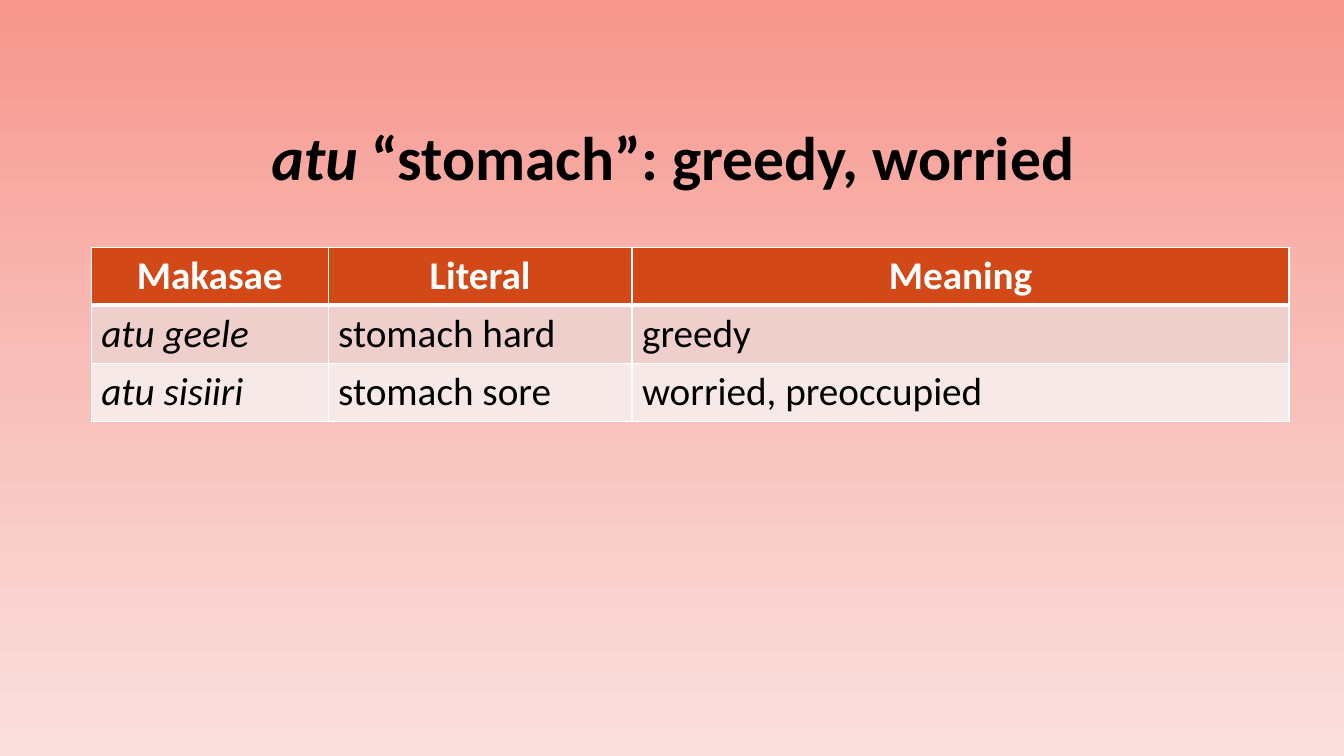
from copy import deepcopy

from lxml.etree import SubElement
from pptx import Presentation
from pptx.dml.color import RGBColor
from pptx.enum.text import MSO_ANCHOR, PP_ALIGN
from pptx.oxml.ns import qn
from pptx.util import Pt

FONT = "Calibri"
BACKGROUND = ["F7968C", "F8BFBA", "FBE0DE"]
COLUMN_WIDTHS = [169.2, 217.1, 469.3]
ROW_HEIGHT = 41
ROW_FILLS = ["D34817", "EFCFCC", "F7E9E8"]
ROWS = [
    ["Makasae", "Literal", "Meaning"],
    ["atu geele", "stomach hard", "greedy"],
    ["atu sisiiri", "stomach sore", "worried, preoccupied"],
]


def colour(value):
    """Turn a hex string into a colour."""
    return RGBColor.from_string(value)


def style(paragraph, size, value, bold=False):
    """Set the font of a whole paragraph."""
    font = paragraph.font
    font.name, font.size, font.bold = FONT, Pt(size), bold
    font.color.rgb = colour(value)


def paint_background(page):
    """Fill the page with an even gradient from top to bottom."""
    fill = page.background.fill
    fill.gradient()
    fill.gradient_angle = 270
    stops = page.element.find(".//" + qn("a:gsLst"))
    stops.insert(1, deepcopy(stops[0]))
    for index, value in enumerate(BACKGROUND):
        stop = stops[index]
        stop.set("pos", str(index * 50000))
        stop.remove(stop[0])
        SubElement(stop, qn("a:srgbClr"), val=value)


def write_title(page):
    """Place the title, with its first word in italics."""
    title = page.shapes.title
    title.left, title.top, title.width, title.height = Pt(115.2), Pt(64), Pt(731.5), Pt(95)
    title.text_frame.vertical_anchor = MSO_ANCHOR.MIDDLE
    paragraph = title.text_frame.paragraphs[0]
    paragraph.alignment = PP_ALIGN.CENTER
    for text, italic in [("atu", True), (" “stomach”: greedy, worried", False)]:
        span = paragraph.add_run()
        span.text, span.font.italic = text, italic
    style(paragraph, 44, "000000", bold=True)


def draw_borders(cell, top, bottom):
    """Give a cell white borders, with chosen top and bottom widths."""
    properties = cell._tc.get_or_add_tcPr()
    for side, width in [("L", 1), ("R", 1), ("T", top), ("B", bottom)]:
        line = SubElement(properties, qn("a:ln" + side), w=str(Pt(width)))
        SubElement(SubElement(line, qn("a:solidFill")), qn("a:srgbClr"), val="FFFFFF")


def fill_cell(cell, text, row, column):
    """Write and format one table cell."""
    header = row == 0
    draw_borders(cell, 3 if row == 1 else 1, 3 if header else 1)
    cell.fill.solid()
    cell.fill.fore_color.rgb = colour(ROW_FILLS[row])
    cell.text = text
    paragraph = cell.text_frame.paragraphs[0]
    paragraph.alignment = PP_ALIGN.CENTER if header else PP_ALIGN.LEFT
    style(paragraph, 28, "FFFFFF" if header else "000000", bold=header)
    paragraph.font.italic = not header and column == 0


def add_phrases(page):
    """Add the table of phrases and their meanings."""
    frame = page.shapes.add_table(
        len(ROWS), len(COLUMN_WIDTHS), Pt(65.2), Pt(176.6),
        Pt(sum(COLUMN_WIDTHS)), Pt(ROW_HEIGHT * len(ROWS)),
    )
    table = frame.table
    for column, width in zip(table.columns, COLUMN_WIDTHS):
        column.width = Pt(width)
    for row, texts in enumerate(ROWS):
        for column, text in enumerate(texts):
            fill_cell(table.cell(row, column), text, row, column)


def main():
    """Build the slide and save it."""
    deck = Presentation()
    deck.slide_width, deck.slide_height = Pt(960), Pt(540)
    page = deck.slides.add_slide(deck.slide_layouts[5])
    paint_background(page)
    write_title(page)
    add_phrases(page)
    deck.save("out.pptx")


if __name__ == "__main__":
    main()
